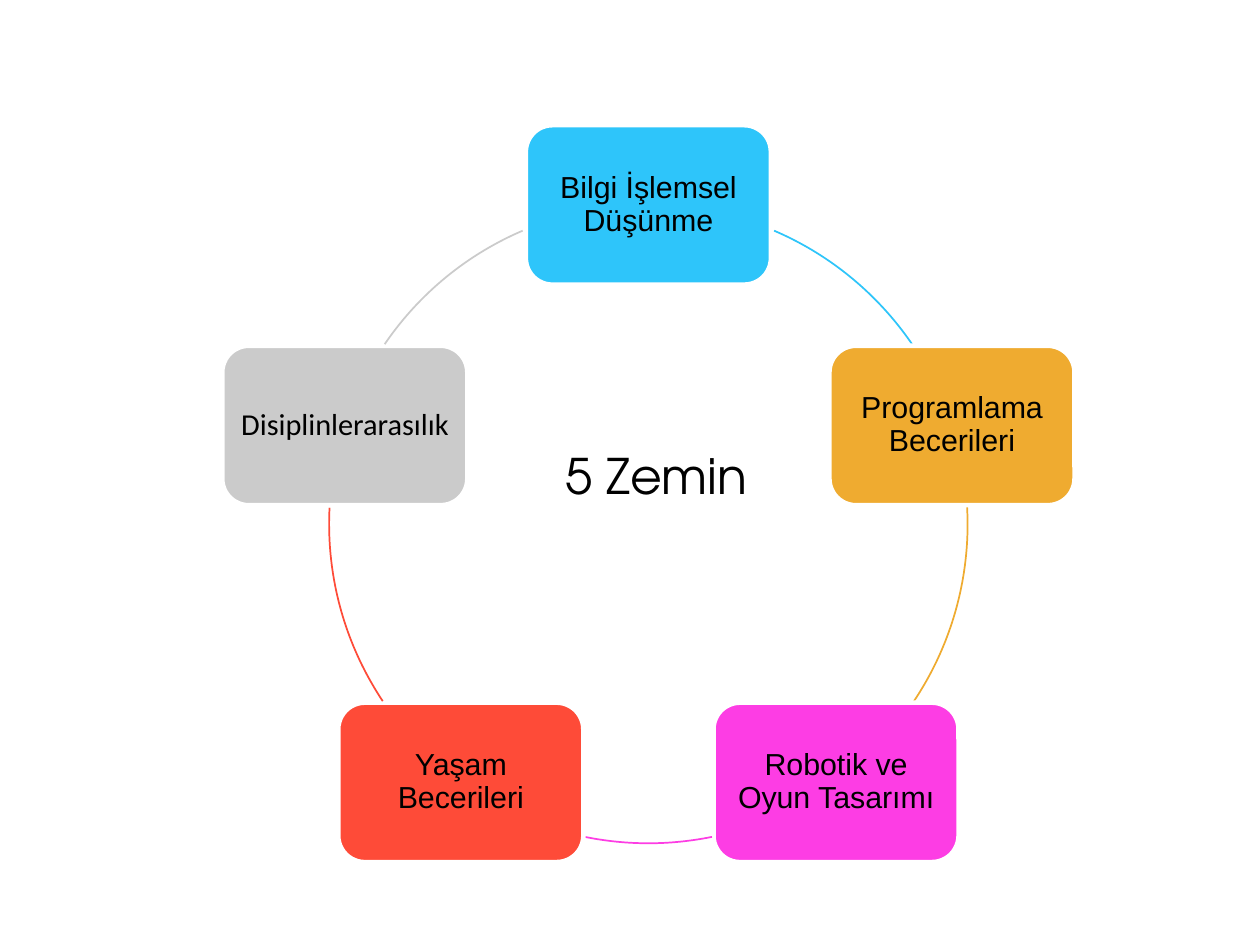
from math import cos, radians, sin

from pptx import Presentation
from pptx import util as u
from pptx.dml.color import RGBColor
from pptx.enum import shapes, text

HEADING = "5 Zemin"
GROUNDS = [
    ("Bilgi İşlemsel Düşünme", "blue", "Arial", (293.2, 325.7)),
    ("Programlama Becerileri", "amber", "Arial", (357, 33.7)),
    ("Robotik ve Oyun Tasarımı", "pink", "Arial", (78.5, 101.5)),
    ("Yaşam Becerileri", "red", "Arial", (146.3, 183)),
    ("Disiplinlerarasılık", "grey", "Calibri", (214.3, 246.8)),
]
THEME = {
    "blue": "2EC5FA", "amber": "EFAB30", "pink": "FD3DE4", "red": "FE4B38",
    "grey": "CBCBCB", "white": "FFFFFF", "black": "000000",
    "heading_font": "TeX Gyre Adventor", "heading_size": 21, "ground_size": 13,
    "border": 2, "arc": 0.75,
}
WIDTH = 7.5
HEIGHT = WIDTH * 3 / 4
CENTER_X, CENTER_Y, RADIUS = 3.86, 3.12, 1.9
CARD_W, CARD_H = 1.46, 0.95
HEADING_BOX = (3.17, 2.6, 1.48, 0.45)


def color(name):
    return RGBColor.from_string(THEME[name])


def apply(target, values):
    for name, value in values.items():
        setattr(target, name, value)


def outline(shape, name, width):
    shape.shadow.inherit = False
    shape.line.color.rgb = color(name)
    shape.line.width = u.Pt(THEME[width])


def write(shape, words, font, size, anchor, side, spacing):
    frame = shape.text_frame
    frame.text = words
    apply(frame, {
        "word_wrap": True, "auto_size": text.MSO_AUTO_SIZE.NONE, "vertical_anchor": anchor,
        "margin_left": u.Inches(side), "margin_right": u.Inches(side),
        "margin_top": u.Inches(0.05), "margin_bottom": u.Inches(0.05),
    })
    line = frame.paragraphs[0]
    apply(line, {"alignment": text.PP_ALIGN.CENTER, "line_spacing": spacing})
    run = line.runs[0]
    apply(run.font, {"name": font, "size": u.Pt(THEME[size])})
    run.font.color.rgb = color("black")


def box(x, y, w, h):
    return [u.Inches(n) for n in (x, y, w, h)]


def add_arc(slide, angles, hue):
    arc = slide.shapes.add_shape(
        shapes.MSO_SHAPE.ARC,
        *box(CENTER_X - RADIUS, CENTER_Y - RADIUS, 2 * RADIUS, 2 * RADIUS))
    for index, angle in enumerate(angles):
        arc.adjustments[index] = angle * 0.6
    arc.fill.background()
    outline(arc, hue, "arc")


def add_card(slide, step, words, hue, font):
    turn = radians(72 * step - 90)
    x = CENTER_X + RADIUS * cos(turn) - CARD_W / 2
    y = CENTER_Y + RADIUS * sin(turn) - CARD_H / 2
    card = slide.shapes.add_shape(
        shapes.MSO_SHAPE.ROUNDED_RECTANGLE, *box(x, y, CARD_W, CARD_H))
    card.fill.solid()
    card.fill.fore_color.rgb = color(hue)
    outline(card, "white", "border")
    write(card, words, font, "ground_size", text.MSO_ANCHOR.MIDDLE, 0.05, 0.9)


def main():
    deck = Presentation()
    apply(deck, {"slide_width": u.Inches(WIDTH), "slide_height": u.Inches(HEIGHT)})
    slide = deck.slides.add_slide(deck.slide_layouts[5])
    heading = slide.shapes.title
    apply(heading, dict(zip(("left", "top", "width", "height"), box(*HEADING_BOX))))
    write(heading, HEADING, THEME["heading_font"], "heading_size",
          text.MSO_ANCHOR.TOP, 0.1, 1.0)
    for step, (words, hue, font, angles) in enumerate(GROUNDS):
        add_card(slide, step, words, hue, font)
        add_arc(slide, angles, hue)
    deck.save("out.pptx")


if __name__ == "__main__":
    main()
